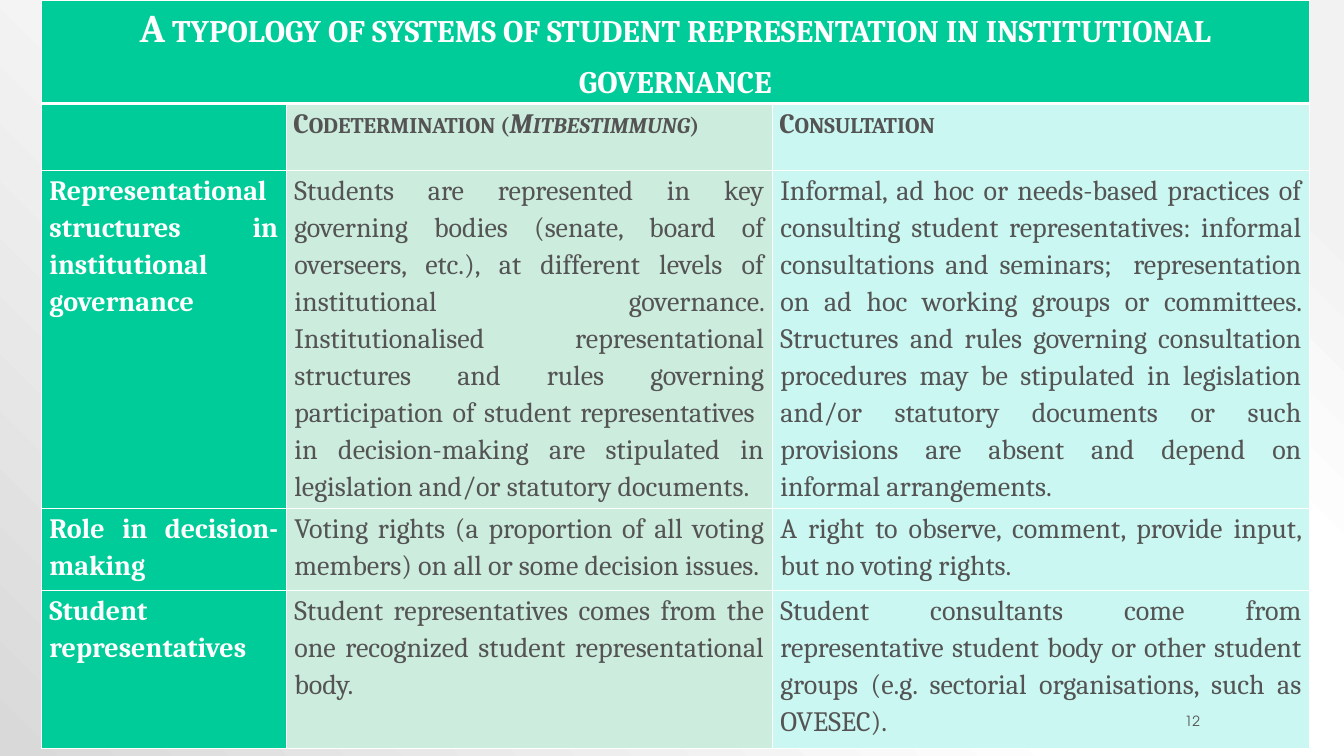
"""Build a slide with a table comparing two systems of student representation."""
from lxml.etree import SubElement
from pptx import Presentation
from pptx.dml.color import RGBColor
from pptx.enum.text import MSO_ANCHOR, PP_ALIGN
from pptx.oxml import parse_xml
from pptx.oxml.ns import nsdecls, qn
from pptx.util import Inches, Pt

COLORS = {"green": "00CC99", "mint": "CCECDE", "aqua": "CAF7F1",
          "white": "FFFFFF", "gray": "545454"}
BACKGROUND_STOPS = [(10, "F2F2F2"), (28, "FFFFFF"), (48, "FFFFFF"), (100, "D9D9D9")]
TITLE = "A typology of systems of student representation in institutional governance"
HEADINGS = ["", ["Codetermination (", "Mitbestimmung", ")"], "Consultation"]
BODY = [
    ["Representational structures in institutional governance",
     "Students are represented in key governing bodies (senate, board of overseers, etc.), "
     "at different levels of institutional governance. Institutionalised representational "
     "structures and rules governing participation of student representatives  in "
     "decision-making are stipulated in legislation and/or statutory documents.",
     "Informal, ad hoc or needs-based practices of consulting student representatives: "
     "informal consultations and seminars;  representation on ad hoc working groups or "
     "committees. Structures and rules governing consultation procedures may be stipulated "
     "in legislation and/or statutory documents or such provisions are absent and depend on "
     "informal arrangements."],
    ["Role in decision-making",
     "Voting rights (a proportion of all voting members) on all or some decision issues.",
     "A right to observe, comment, provide input, but no voting rights."],
    ["Student representatives",
     "Student representatives comes from the one recognized student representational body.",
     "Student consultants come from representative student body or other student groups "
     "(e.g. sectorial organisations, such as OVESEC)."],
]
ROWS = [[TITLE, "", ""], HEADINGS, *BODY]
COLUMN_WIDTHS = [2.43, 4.82, 5.33]
ROW_HEIGHTS = [1.02, 0.66, 3.36, 0.81, 1.57]
COLUMN_FILLS = ["green", "mint", "aqua"]
SLIDE_NUMBER = "12"


def set_background(slide):
    stops = "".join(f'<a:gs pos="{position * 1000}"><a:srgbClr val="{color}"/></a:gs>'
                    for position, color in BACKGROUND_STOPS)
    slide.element.cSld.insert(0, parse_xml(
        f'<p:bg {nsdecls("p", "a")}><p:bgPr><a:gradFill rotWithShape="1">'
        f'<a:gsLst>{stops}</a:gsLst><a:path path="circle">'
        '<a:fillToRect l="100000" b="100000"/></a:path></a:gradFill>'
        '<a:effectLst/></p:bgPr></p:bg>'))


def add_run(paragraph, text, color, **formats):
    run = paragraph.add_run()
    run.text = text
    run.font.color.rgb = RGBColor.from_string(COLORS[color])
    for name, value in formats.items():
        setattr(run.font, name, value)
    return run


def set_borders(cell, row):
    thick_side = {0: "B", 1: "T"}.get(row)
    properties = cell._tc.get_or_add_tcPr()
    for side in "LRTB":
        width = Pt(3 if side == thick_side else 1)
        line = SubElement(properties, qn(f"a:ln{side}"), w=str(width))
        fill = SubElement(line, qn("a:solidFill"))
        SubElement(fill, qn("a:srgbClr"), val=COLORS["white"])


def format_cell(cell, row, column, content):
    set_borders(cell, row)
    fill = "green" if row == 0 else COLUMN_FILLS[column]
    cell.fill.solid()
    cell.fill.fore_color.rgb = RGBColor.from_string(COLORS[fill])
    side_margin = Inches(0.07 if row < 2 else 0.08)
    margins = {"margin_left": side_margin, "margin_right": side_margin,
               "margin_top": 0, "margin_bottom": 0}
    for name, value in margins.items():
        setattr(cell, name, value)
    if not content:
        return
    paragraph = cell.text_frame.paragraphs[0]
    layout = {"alignment": PP_ALIGN.JUSTIFY if row else PP_ALIGN.CENTER,
              "line_spacing": 1.15,
              "space_after": Pt(0 if row == 2 and column else 10)}
    for name, value in layout.items():
        setattr(paragraph, name, value)
    for index, text in enumerate([content] if isinstance(content, str) else content):
        run = add_run(paragraph, text, "white" if fill == "green" else "gray",
                      name="Cambria", size=Pt(20 if row else 28),
                      bold=row < 2 or column == 0, italic=index == 1)
        if row < 2:
            run.font._element.set("cap", "small")


def add_typology_table(slide):
    table = slide.shapes.add_table(
        len(ROWS), len(COLUMN_WIDTHS), Inches(0.41), 0,
        Inches(sum(COLUMN_WIDTHS)), Inches(sum(ROW_HEIGHTS))).table
    table.first_row = table.horz_banding = False
    for column, width in zip(table.columns, COLUMN_WIDTHS):
        column.width = Inches(width)
    for row, height in zip(table.rows, ROW_HEIGHTS):
        row.height = Inches(height)
    table.cell(0, 0).merge(table.cell(0, 2))
    for row, contents in enumerate(ROWS):
        for column, content in enumerate(contents):
            format_cell(table.cell(row, column), row, column, content)


def add_slide_number(slide):
    box = slide.shapes.add_textbox(Inches(10.75), Inches(7.05), Inches(1.25), Inches(0.2))
    frame = box.text_frame
    frame.word_wrap = True
    frame.vertical_anchor = MSO_ANCHOR.MIDDLE
    paragraph = frame.paragraphs[0]
    paragraph.alignment = PP_ALIGN.RIGHT
    add_run(paragraph, SLIDE_NUMBER, "gray", name="TeX Gyre Adventor", size=Pt(10))


def main():
    presentation = Presentation()
    presentation.slide_width = Inches(13.33)
    presentation.slide_height = Inches(7.5)
    slide = presentation.slides.add_slide(presentation.slide_layouts[6])
    set_background(slide)
    add_typology_table(slide)
    add_slide_number(slide)
    presentation.save("out.pptx")


if __name__ == "__main__":
    main()
